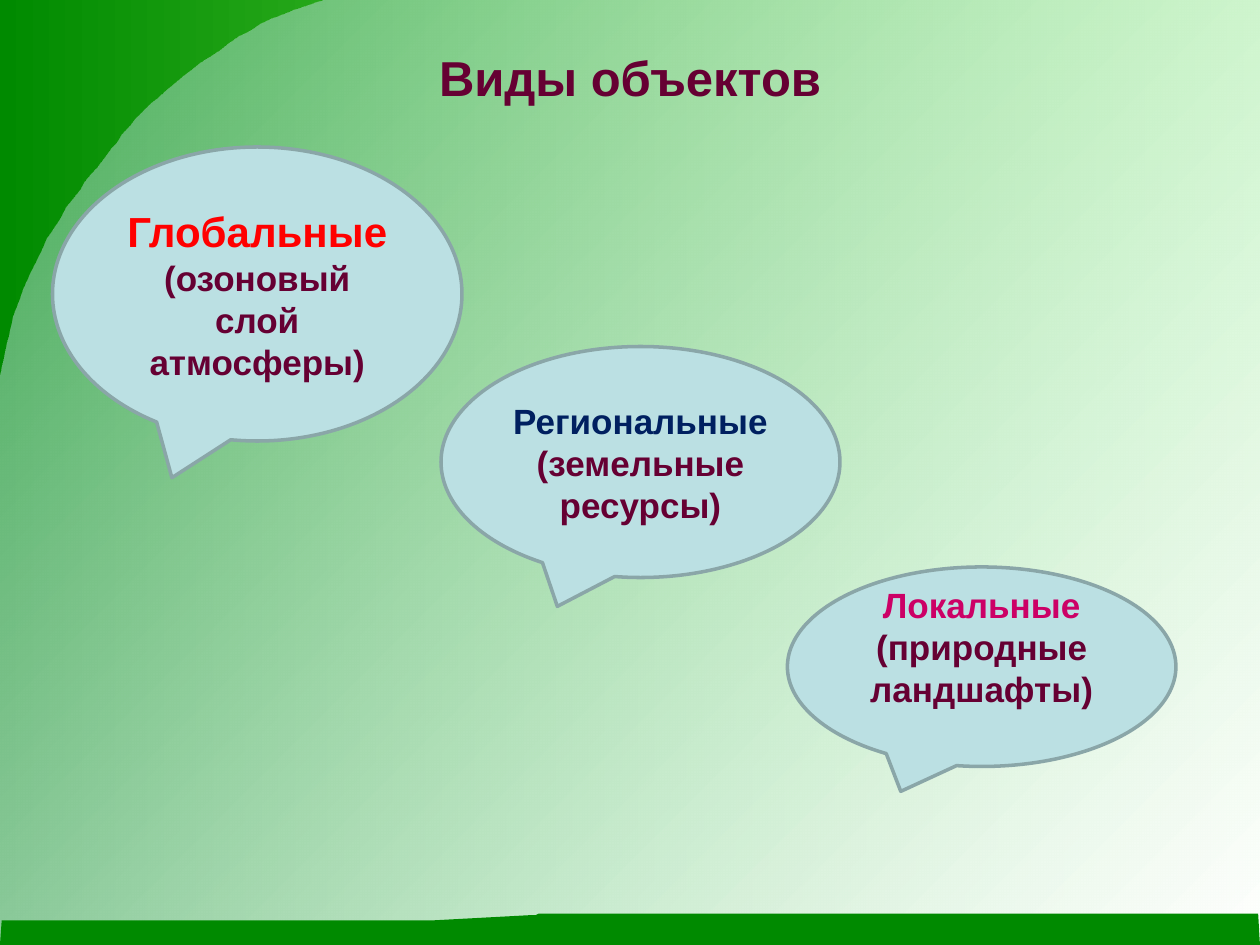
from dataclasses import dataclass

from lxml import etree
from pptx import Presentation
from pptx.dml.color import RGBColor
from pptx.enum import shapes, text
from pptx.oxml import ns
from pptx.util import Pt

HEX = {
    "green": "008A00", "lime": "99FF66", "pale": "BBE0E3", "white": "FFFFFF",
    "edge": "8AA6A8", "wine": "660033", "red": "FF0000", "navy": "002060",
    "pink": "CC0066",
}
WIDE, HIGH = 720, 540
STEPS = 24


@dataclass
class Bubble:
    left: float
    top: float
    width: float
    height: float
    head: str
    note: str
    hue: str
    size: float = 20
    foot: float = 3.6  # bottom inset


BUBBLES = [
    Bubble(450, 324, 222, 114, "Локальные", "(природные ландшафты)", "pink", foot=27),
    Bubble(252, 198, 228, 132, "Региональные", "(земельные ресурсы)", "navy"),
    Bubble(30, 84, 234, 168, "Глобальные", "(озоновый слой атмосферы)", "red", size=24),
]


def color(name: str) -> RGBColor:
    return RGBColor.from_string(HEX[name])


def curve(*knots: tuple) -> list:
    """Points along one cubic curve, without its start."""
    pts = []
    for i in range(1, STEPS + 1):
        t = i / STEPS
        mix = ((1 - t) ** 3, 3 * t * (1 - t) ** 2, 3 * t * t * (1 - t), t ** 3)
        pts.append(tuple(sum(m * k[a] for m, k in zip(mix, knots)) for a in (0, 1)))
    return pts


def blend(fill, first: str, last: str, angle: float) -> None:
    fill.gradient()
    fill.gradient_angle = angle
    for stop, name in zip(fill.gradient_stops, (first, last)):
        stop.color.rgb = color(name)


def outline(slide, pts: list):
    """Closed borderless shape through points given in points."""
    pen = slide.shapes.build_freeform(*pts[0], scale=float(Pt(1)))
    pen.add_line_segments(pts[1:], close=True)
    shape = pen.convert_to_shape()
    shape.shadow.inherit = False
    shape.line.fill.background()
    return shape


def write(para, words: str, *, size: float = 20, hue: str = "wine") -> None:
    para.alignment = text.PP_ALIGN.CENTER
    run = para.add_run()
    run.text = words
    font = run.font
    font.name, font.size, font.bold = "Arial", Pt(size), True
    font.color.rgb = color(hue)


def backdrop(slide) -> None:
    blend(slide.background.fill, "green", "lime", 0)
    a, b, c = (186, 0), (70.5, 77), (0, 217)
    sheet = outline(slide, [
        a, *curve(a, (137, 11.5), (83.5, 60), b),
        *curve(b, (57.5, 95), (11.5, 140), c),
        (0, HIGH), (WIDE, HIGH), (WIDE, 0),
    ])
    blend(sheet.fill, "pale", "white", 315)
    tint = next(sheet._element.iter(ns.qn("a:srgbClr")))
    etree.SubElement(tint, ns.qn("a:alpha")).set("val", "39000")

    d, e = (340.5, 522), (246, 525.6)
    band = outline(slide, [
        (719.3, 522), d, *curve(d, (322.5, 522), (317.5, 522), (302.5, 522.7)),
        e, *curve(e, (230, 526.3), (227.5, 526.3), (206, 526.3)),
        (0.7, 526.3), (0, HIGH), (WIDE, HIGH),
    ])
    band.fill.solid()
    band.fill.fore_color.rgb = color("green")


def heading(slide, words: str) -> None:
    title = slide.shapes.title
    slide.shapes._spTree.append(title._element)  # bring above the backdrop
    title.left, title.top, title.width, title.height = map(Pt, (36, 21.6, 648, 44.6))
    frame = title.text_frame
    frame.auto_size = text.MSO_AUTO_SIZE.NONE
    frame.vertical_anchor = text.MSO_ANCHOR.MIDDLE
    write(frame.paragraphs[0], words, size=28)


def callout(slide, item: Bubble) -> None:
    box = map(Pt, (item.left, item.top, item.width, item.height))
    shape = slide.shapes.add_shape(shapes.MSO_SHAPE.OVAL_CALLOUT, *box)
    shape.shadow.inherit = False
    shape.fill.solid()
    shape.fill.fore_color.rgb = color("pale")
    shape.line.color.rgb = color("edge")
    shape.line.width = Pt(2)
    frame = shape.text_frame
    frame.word_wrap = True
    frame.vertical_anchor = text.MSO_ANCHOR.MIDDLE
    frame.margin_bottom = Pt(item.foot)
    write(frame.paragraphs[0], item.head, size=item.size, hue=item.hue)
    write(frame.add_paragraph(), item.note)


def main() -> None:
    deck = Presentation()
    deck.slide_width, deck.slide_height = Pt(WIDE), Pt(HIGH)
    slide = deck.slides.add_slide(deck.slide_layouts[5])
    backdrop(slide)
    heading(slide, "Виды объектов")
    for item in BUBBLES:
        callout(slide, item)
    deck.save("out.pptx")


if __name__ == "__main__":
    main()
